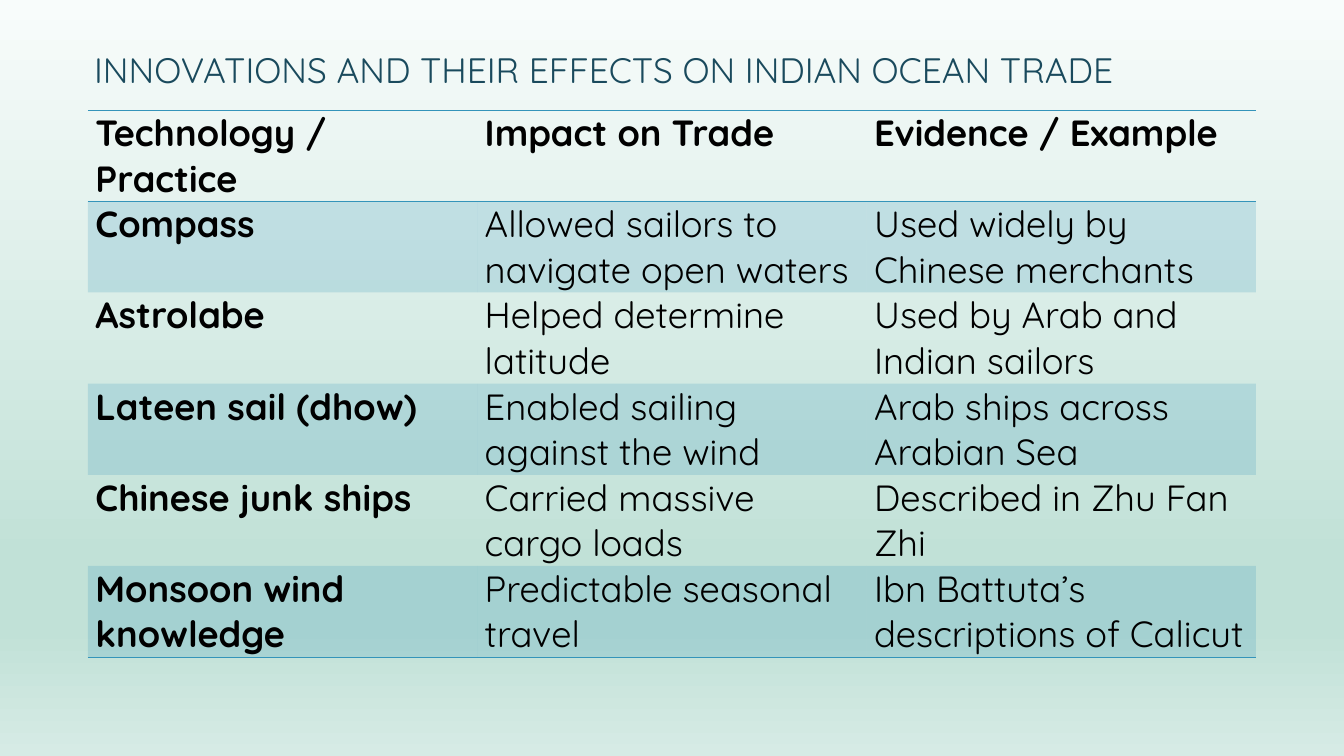
from copy import deepcopy

from lxml import etree
from pptx import Presentation
from pptx.dml.color import RGBColor
from pptx.enum.text import MSO_ANCHOR, PP_ALIGN
from pptx.oxml.ns import qn
from pptx.util import Pt

LEFT = PP_ALIGN.LEFT
TOP, BOTTOM = MSO_ANCHOR.TOP, MSO_ANCHOR.BOTTOM
FONT = "Quicksand"
ACCENT = "3494BA"
NO_STYLE_NO_GRID = "{2D5ABB26-0587-4C30-8999-92F81FD0307C}"


def colour(hex_value):
    return RGBColor.from_string(hex_value)


def add_border(cell, side):
    """Draw a thin accent line on one side of a cell: lnT or lnB."""
    line = etree.SubElement(cell._tc.get_or_add_tcPr(), qn(f"a:{side}"), w=str(Pt(1)))
    fill = etree.SubElement(line, qn("a:solidFill"))
    etree.SubElement(fill, qn("a:srgbClr"), val=ACCENT)


prs = Presentation()
prs.slide_width, prs.slide_height = Pt(960), Pt(540)
slide = prs.slides.add_slide(prs.slide_layouts[5])

# Background gradient, top to bottom
background = slide.background.fill
background.gradient()
background.gradient_angle = 270
stop_list = slide.element.find(".//" + qn("a:gsLst"))
for _ in range(2):
    stop_list.append(deepcopy(stop_list[0]))
shades = [(0, "F8FCFB"), (0.74, "C1E1D7"), (0.83, "C1E1D7"), (1, "D6EBE5")]
for stop, (position, shade) in zip(background.gradient_stops, shades):
    stop.position = position
    stop.color.rgb = colour(shade)

# Title
title = slide.shapes.title
title_box = {"left": Pt(60), "top": Pt(24), "width": Pt(768), "height": Pt(44.5)}
for name, value in title_box.items():
    setattr(title, name, value)
title.text_frame.text = "INNOVATIONS AND THEIR EFFECTS ON INDIAN OCEAN TRADE"
title.text_frame.vertical_anchor = BOTTOM
heading = title.text_frame.paragraphs[0]
heading.alignment = LEFT
heading.line_spacing = 0.9
for name, value in {"name": FONT, "size": Pt(25.2), "bold": False}.items():
    setattr(heading.font, name, value)
heading.font.color.rgb = colour("1A4A5D")

# Table of innovations
innovations = [
    ("Technology / Practice", "Impact on Trade", "Evidence / Example"),
    ("Compass", "Allowed sailors to navigate open waters", "Used widely by Chinese merchants"),
    ("Astrolabe", "Helped determine latitude", "Used by Arab and Indian sailors"),
    ("Lateen sail (dhow)", "Enabled sailing against the wind", "Arab ships across Arabian Sea"),
    ("Chinese junk ships", "Carried massive cargo loads", "Described in Zhu Fan Zhi"),
    ("Monsoon wind knowledge", "Predictable seasonal travel",
     "Ibn Battuta’s descriptions of Calicut"),
]
last_row = len(innovations) - 1
table = slide.shapes.add_table(
    len(innovations), 3, Pt(62.8), Pt(78.7), Pt(834.3), Pt(390)).table
table.horz_banding = False
table._tbl.tblPr.find(qn("a:tableStyleId")).text = NO_STYLE_NO_GRID

cell_format = {"margin_left": Pt(5.4), "margin_right": Pt(5.4), "margin_top": 0,
               "margin_bottom": 0, "vertical_anchor": TOP}
for row, texts in enumerate(innovations):
    for column, text in enumerate(texts):
        cell = table.cell(row, column)
        cell.text = text
        for name, value in cell_format.items():
            setattr(cell, name, value)
        font = cell.text_frame.paragraphs[0].runs[0].font
        is_label = row == 0 or column == 0
        for name, value in {"name": FONT, "size": Pt(26), "bold": is_label}.items():
            setattr(font, name, value)
        font.color.rgb = colour("000000")

        if row == 0:
            add_border(cell, "lnT")
        if row in (0, last_row):
            add_border(cell, "lnB")
        if row % 2:
            cell.fill.solid()
            cell.fill.fore_color.rgb = colour(ACCENT)
            tint = cell._tc.tcPr.find(qn("a:solidFill"))[0]
            etree.SubElement(tint, qn("a:alpha"), val="20000")
        else:
            cell.fill.background()

prs.save("out.pptx")
